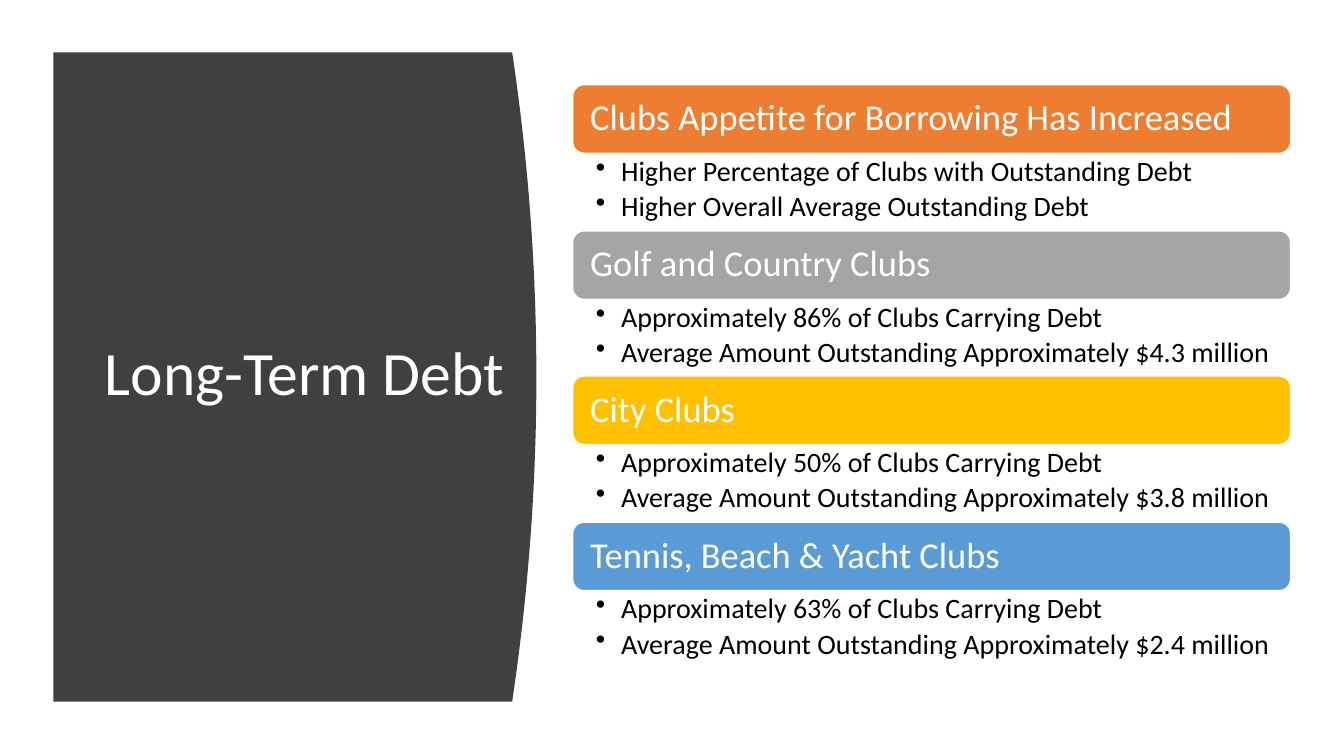
from lxml import etree
from pptx import Presentation
from pptx.dml.color import RGBColor
from pptx.enum.shapes import MSO_SHAPE
from pptx.enum.text import MSO_ANCHOR, PP_ALIGN
from pptx.oxml.ns import qn
from pptx.util import Pt

ROUND = MSO_SHAPE.ROUNDED_RECTANGLE
TOP, MIDDLE = MSO_ANCHOR.TOP, MSO_ANCHOR.MIDDLE
LEFT = PP_ALIGN.LEFT

# Content
TITLE = "Long-Term Debt"
GROUPS = [
    ("Clubs Appetite for Borrowing Has Increased", "orange", [
        "Higher Percentage of Clubs with Outstanding Debt",
        "Higher Overall Average Outstanding Debt"]),
    ("Golf and Country Clubs", "gray", [
        "Approximately 86% of Clubs Carrying Debt",
        "Average Amount Outstanding Approximately $4.3 million"]),
    ("City Clubs", "gold", [
        "Approximately 50% of Clubs Carrying Debt",
        "Average Amount Outstanding Approximately $3.8 million"]),
    ("Tennis, Beach & Yacht Clubs", "blue", [
        "Approximately 63% of Clubs Carrying Debt",
        "Average Amount Outstanding Approximately $2.4 million"]),
]
COLORS = {"dark": "404040", "white": "FFFFFF", "black": "000000",
          "orange": "ED7D31", "gray": "A5A5A5", "gold": "FFC000", "blue": "5B9BD5"}
FONT = "Calibri"

# Layout in px, 100 to the inch
PX = 9144
WIDTH, HEIGHT = 1333, 750
PANEL = (53, 52, 508, 696)  # left, top, right, bottom
BULGE, STEPS = 24, 40
TITLE_BOX = (94, 111, 428, 524)
LIST_X, LIST_Y, LIST_W = 568, 84, 712
BAR_H, BODY_H, PITCH = 68, 77, 144.6
INDENT = 25


def px(*sizes):
    return [round(size * PX) for size in sizes]


def color(name):
    return RGBColor.from_string(COLORS[name])


def write(shape, lines, size, tint, anchor, insets, after=0, bullet=False):
    frame = shape.text_frame
    frame.word_wrap = True
    frame.vertical_anchor = anchor
    (frame.margin_left, frame.margin_top,
     frame.margin_right, frame.margin_bottom) = px(*insets)
    frame.text = "\n".join(lines)
    for para in frame.paragraphs:
        para.alignment = LEFT
        para.line_spacing = 0.9
        para.space_after = Pt(after)
        font = para.font
        font.name, font.size = FONT, Pt(size)
        font.color.rgb = color(tint)
        if bullet:
            props = para._p.get_or_add_pPr()
            props.set("marL", str(INDENT * PX))
            props.set("indent", str(-INDENT * PX))
            mark = etree.Element(qn("a:buChar"), char="•")
            props.insert_element_before(mark, "a:tabLst", "a:defRPr", "a:extLst")


deck = Presentation()
deck.slide_width, deck.slide_height = px(WIDTH, HEIGHT)
shapes = deck.slides.add_slide(deck.slide_layouts[6]).shapes

# Dark panel with a bowed right edge
left, top, right, bottom = PANEL
edge = []
for step in range(STEPS + 1):
    part = step / STEPS
    edge.append((right + 4 * BULGE * part * (1 - part), top + (bottom - top) * part))
pen = shapes.build_freeform(*px(left, top))
pen.add_line_segments([px(*spot) for spot in edge] + [px(left, bottom)], close=True)
panel = pen.convert_to_shape()
panel.shadow.inherit = False
panel.fill.solid()
panel.fill.fore_color.rgb = color("dark")
panel.line.fill.background()

# Title
title = shapes.add_textbox(*px(*TITLE_BOX))
write(title, [TITLE], 44, "white", MIDDLE, (10, 5, 10, 5))

# Bars, each with its bullets below
for row, (head, tint, points) in enumerate(GROUPS):
    y = round(LIST_Y + row * PITCH)
    bar = shapes.add_shape(ROUND, *px(LIST_X, y, LIST_W, BAR_H))
    bar.shadow.inherit = False
    bar.fill.solid()
    bar.fill.fore_color.rgb = color(tint)
    bar.line.color.rgb = color("white")
    bar.line.width = Pt(1)
    write(bar, [head], 26, "white", MIDDLE, (14, 11, 14, 11))

    body = shapes.add_textbox(*px(LIST_X, y + BAR_H, LIST_W, BODY_H))
    write(body, points, 20, "black", TOP, (23, 4, 20, 4), after=3.5, bullet=True)

deck.save("out.pptx")
